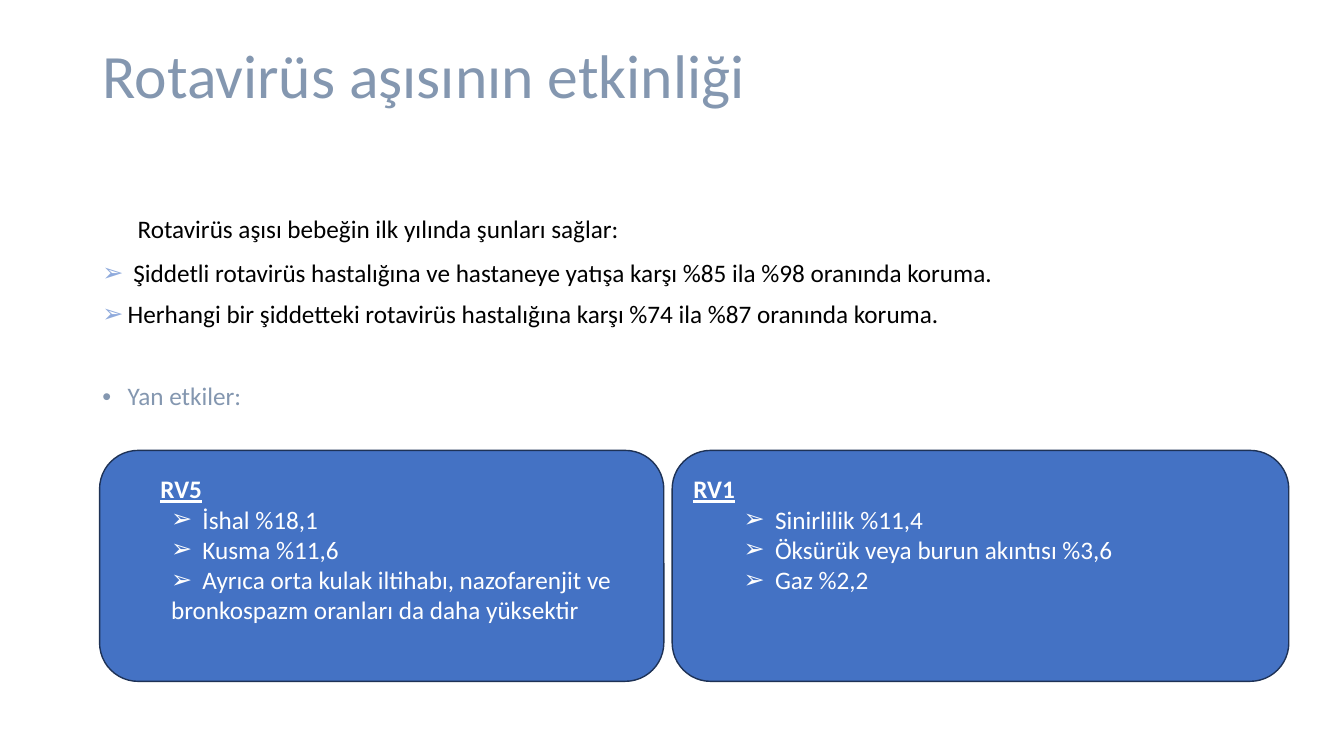
from dataclasses import dataclass

from lxml.etree import SubElement
from pptx import Presentation
from pptx.dml.color import RGBColor
from pptx.enum.shapes import MSO_SHAPE
from pptx.enum.text import MSO_ANCHOR, MSO_AUTO_SIZE, PP_ALIGN
from pptx.oxml.ns import qn
from pptx.util import Cm, Pt


@dataclass(frozen=True)
class Theme:
    """Colours, font and type sizes of the slide."""
    font: str = "Calibri"
    title_size: int = 44
    text_size: int = 18
    heading: str = "8497B0"
    text: str = "000000"
    bullet: str = "8FAADC"
    card: str = "4472C4"
    card_line: str = "1E3256"
    card_text: str = "FFFFFF"


THEME = Theme()
ARROW = "➢"


def set_indent(p, left, hanging=0, bullet=None, color=None):
    """Set the left and hanging indent in cm, and a bullet if one is given."""
    pPr = p._p.get_or_add_pPr()
    pPr.set("marL", str(Cm(left)))
    pPr.set("indent", str(-Cm(hanging)))
    if bullet:
        if color:
            clr = SubElement(pPr, qn("a:buClr"))
            SubElement(clr, qn("a:srgbClr"), val=color)
        SubElement(pPr, qn("a:buFont"), typeface="Arial")
        SubElement(pPr, qn("a:buChar"), char=bullet)


def format_runs(p, size, color, bold=False, underline=False):
    """Apply the theme font to every run of a paragraph."""
    for r in p.runs:
        r.font.name = THEME.font
        r.font.size = Pt(size)
        r.font.color.rgb = RGBColor.from_string(color)
        r.font.bold = bold
        r.font.underline = underline


def next_paragraph(tf, i):
    """Return the first paragraph of a frame, or a new one after it."""
    return tf.add_paragraph() if i else tf.paragraphs[0]


def add_title(s, text, x, y, w, h):
    """Move and format the title placeholder."""
    sp = s.shapes.title
    sp.left, sp.top, sp.width, sp.height = Cm(x), Cm(y), Cm(w), Cm(h)
    tf = sp.text_frame
    tf.text = text
    tf.auto_size = MSO_AUTO_SIZE.NONE
    tf.vertical_anchor = MSO_ANCHOR.TOP
    p = tf.paragraphs[0]
    p.alignment = PP_ALIGN.LEFT
    p.line_spacing = 0.9
    format_runs(p, THEME.title_size, THEME.heading)


def add_body(s, rows, x, y, w, h):
    """Add the body text; a row is text, colour, space before and indent."""
    tf = s.shapes.add_textbox(Cm(x), Cm(y), Cm(w), Cm(h)).text_frame
    tf.word_wrap = True
    for i, (text, color, before, indent) in enumerate(rows):
        p = next_paragraph(tf, i)
        p.text = text
        set_indent(p, *indent)
        p.line_spacing = 0.9
        p.space_before = Pt(before)
        format_runs(p, THEME.text_size, color)


def add_card(s, name, name_indent, effects, tail, x, y, w, h):
    """Add a rounded card with a vaccine name and its side effects."""
    sp = s.shapes.add_shape(MSO_SHAPE.ROUNDED_RECTANGLE, Cm(x), Cm(y), Cm(w), Cm(h))
    sp.shadow.inherit = False
    sp.fill.solid()
    sp.fill.fore_color.rgb = RGBColor.from_string(THEME.card)
    sp.line.color.rgb = RGBColor.from_string(THEME.card_line)
    sp.line.width = Pt(1)
    tf = sp.text_frame
    tf.word_wrap = True
    tf.vertical_anchor = MSO_ANCHOR.TOP
    tf.margin_top = Cm(0.3)
    rows = [(name, (name_indent,))]
    rows += [(effect, (2.06, 0.79, ARROW)) for effect in effects]
    rows += [(line, (1.27,)) for line in tail]
    for i, (text, indent) in enumerate(rows):
        p = next_paragraph(tf, i)
        p.text = text
        p.level = min(i, 1)
        set_indent(p, *indent)
        p.alignment = PP_ALIGN.LEFT
        format_runs(p, THEME.text_size, THEME.card_text, bold=i == 0, underline=i == 0)


def build_slide(prs):
    """Build the slide on vaccine effectiveness and side effects."""
    s = prs.slides.add_slide(prs.slide_layouts[5])
    add_title(s, "Rotavirüs aşısının etkinliği", 2.33, 1.02, 29.21, 3.68)
    arrow = (0.64, 0.64, ARROW, THEME.bullet)
    add_body(s, [
        ("Rotavirüs aşısı bebeğin ilk yılında şunları sağlar:", THEME.text, 0, (0.89,)),
        (" Şiddetli rotavirüs hastalığına ve hastaneye yatışa karşı "
         "%85 ila %98 oranında koruma.", THEME.text, 12, arrow),
        ("Herhangi bir şiddetteki rotavirüs hastalığına karşı "
         "%74 ila %87 oranında koruma.", THEME.text, 10, arrow),
        ("Yan etkiler:", THEME.heading, 39.5, (0.64, 0.64, "•")),
    ], 2.33, 5.33, 29.21, 5.5)
    top, height = 11.35, 5.82
    add_card(s, "RV5", 1, ["İshal %18,1", "Kusma %11,6",
                           "Ayrıca orta kulak iltihabı, nazofarenjit ve"],
             ["bronkospazm oranları da daha yüksektir"], 2.51, top, 14.22, height)
    add_card(s, "RV1", 0, ["Sinirlilik %11,4", "Öksürük veya burun akıntısı %3,6",
                           "Gaz %2,2"], [], 16.94, top, 15.54, height)


def main():
    """Create and save the presentation."""
    prs = Presentation()
    prs.slide_width, prs.slide_height = Cm(33.87), Cm(19.05)
    build_slide(prs)
    prs.save("out.pptx")


if __name__ == "__main__":
    main()
